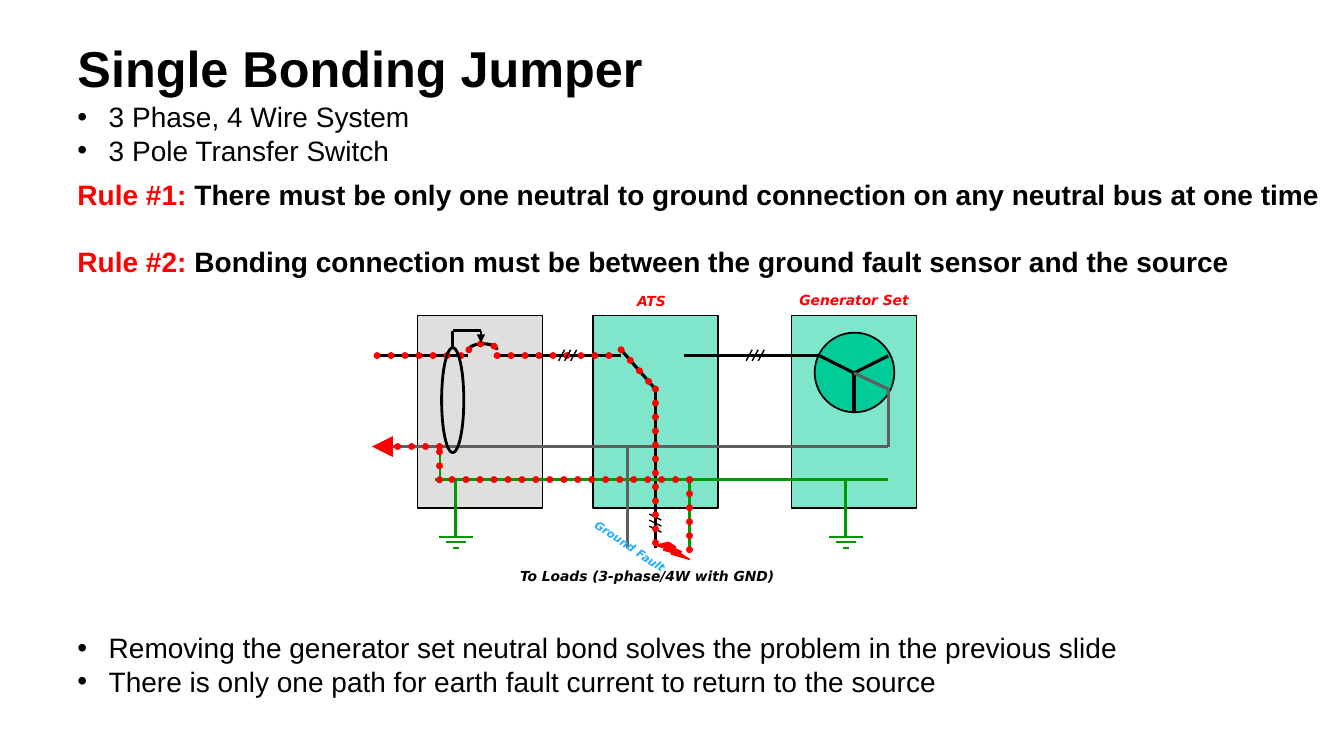
from lxml import etree
from pptx import Presentation
from pptx.dml.color import RGBColor
from pptx.enum.dml import MSO_LINE
from pptx.enum.shapes import MSO_CONNECTOR, MSO_SHAPE
from pptx.enum.text import MSO_ANCHOR, MSO_AUTO_SIZE
from pptx.oxml.ns import qn
from pptx.util import Inches, Pt

STRAIGHT = MSO_CONNECTOR.STRAIGHT
RECTANGLE = MSO_SHAPE.RECTANGLE
OVAL = MSO_SHAPE.OVAL
BRACKET = MSO_SHAPE.RIGHT_BRACKET
BOLT = MSO_SHAPE.LIGHTNING_BOLT
DOTTED = MSO_LINE.ROUND_DOT
TOP = MSO_ANCHOR.TOP
FIT = MSO_AUTO_SIZE.SHAPE_TO_FIT_TEXT

COLORS = {
    "black": "000000", "red": "FF0000", "grey": "5F5F5F", "green": "009900",
    "teal": "00CC99", "silver": "C0C0C0", "sky": "20ADFF",
}
BODY_FONT, LABEL_FONT = "Arial", "DejaVu Sans"

TITLE = "Single Bonding Jumper"
RULES = [
    ("Rule #1: ", "There must be only one neutral to ground connection on any neutral bus at one time"),
    ("Rule #2: ", "Bonding connection must be between the ground fault sensor and the source"),
]
BULLET_LISTS = [
    (0.94, 10, ["3 Phase, 4 Wire System", "3 Pole Transfer Switch"]),
    (6.21, 10.56, [
        "Removing the generator set neutral bond solves the problem in the previous slide",
        "There is only one path for earth fault current to return to the source",
    ]),
]
LABELS = [
    ("ATS", 6.22, 2.85, 0.5, "red"),
    ("Generator Set", 7.83, 2.84, 1.29, "red"),
    ("To Loads (3-phase/4W with GND)", 5.06, 5.58, 2.85, "black"),
]
CABINETS = [(4.14, "silver"), (5.88, "teal"), (7.85, "teal")]
PHASE, NEUTRAL, GROUND, LOAD_END = 3.53, 4.43, 4.76, 5.44
POLE, STAR = (6.5, 3.86), (8.47, 3.7)
WIRES = [
    ("black", 2.25, [(3.74, PHASE), (4.64, PHASE)]),
    ("black", 2.25, [(4.93, PHASE), (6.16, PHASE)]),
    ("grey", 2.25, [(3.74, NEUTRAL), (8.81, NEUTRAL)]),
    ("black", 2.25, [(6.16, 3.47), POLE, (6.5, LOAD_END)]),
    ("black", 2.25, [(6.78, PHASE), (8.13, PHASE), STAR, (8.81, PHASE)]),
    ("black", 2.25, [STAR, (8.47, 4.09)]),
    ("grey", 2.25, [STAR, (8.81, 3.86), (8.81, NEUTRAL)]),
    ("green", 1.5, [(4.36, NEUTRAL), (4.36, GROUND)]),
    ("green", 2.25, [(4.31, GROUND), (8.81, GROUND)]),
    ("grey", 2.25, [(6.22, NEUTRAL), (6.22, LOAD_END)]),
    ("green", 2.25, [(6.84, GROUND), (6.84, LOAD_END)]),
]
FAULT_PATHS = [
    [(3.74, PHASE), (4.64, PHASE)],
    [(4.93, PHASE), (6.16, PHASE)],
    [(6.16, 3.47), POLE, (6.5, 5.5)],
    [(6.84, GROUND), (6.84, 5.55)],
    [(6.84, GROUND), (4.36, GROUND), (4.36, NEUTRAL)],
]
FAULT_RETURN = [(4.36, NEUTRAL), (3.69, NEUTRAL)]
PHASE_MARKS = [5.54, 7.4]
EARTH_RODS = [4.52, 8.39]
EARTH_BARS = [(5.33, 0.17), (5.38, 0.1), (5.44, 0.03)]


def rgb(name):
    return RGBColor.from_string(COLORS[name])


def style_line(item, color, width, dotted=False, arrow=False):
    item.line.color.rgb = rgb(color)
    item.line.width = Pt(width)
    outline = item.element.spPr.find(qn("a:ln"))
    if dotted:
        item.line.dash_style = DOTTED
        outline.set("cap", "rnd")
    if arrow:
        etree.SubElement(outline, qn("a:tailEnd"), type="triangle")


def add_wire(shapes, points, color, width, **style):
    for (x1, y1), (x2, y2) in zip(points, points[1:]):
        wire = shapes.add_connector(STRAIGHT, Inches(x1), Inches(y1), Inches(x2), Inches(y2))
        style_line(wire, color, width, **style)
        etree.SubElement(wire.element.spPr, qn("a:effectLst"))


def add_part(shapes, kind, place, color, width, fill=None, alpha=None, dotted=False):
    part = shapes.add_shape(kind, *map(Inches, place))
    part.shadow.inherit = False
    if fill:
        part.fill.solid()
        part.fill.fore_color.rgb = rgb(fill)
    else:
        part.fill.background()
    if alpha:
        tint = part.element.spPr.find(qn("a:solidFill")).find(qn("a:srgbClr"))
        etree.SubElement(tint, qn("a:alpha"), val=str(alpha * 1000))
    style_line(part, color, width, dotted)
    return part


def add_breaker(shapes, color, width, dotted=False):
    breaker = add_part(shapes, BRACKET, (4.76, 3.3, 0.06, 0.28), color, width, dotted=dotted)
    breaker.adjustments[0] = 2.34
    breaker.rotation = 270


def add_text(shapes, place, paragraphs, size, font, bold=False, italic=False, wrap=True):
    box = shapes.add_textbox(*map(Inches, place))
    frame = box.text_frame
    frame.word_wrap = wrap
    frame.auto_size = FIT
    frame.vertical_anchor = TOP
    for index, spans in enumerate(paragraphs):
        para = frame.add_paragraph() if index else frame.paragraphs[0]
        for text, color in spans:
            span = para.add_run()
            span.text = text
            span.font.name = font
            span.font.size = Pt(size)
            span.font.bold = bold
            span.font.italic = italic
            span.font.color.rgb = rgb(color)
    return box


def add_texts(shapes):
    title = add_text(shapes, (0.67, 0.22, 11.75, 0.94), [[(TITLE, "black")]], 36, BODY_FONT, bold=True)
    title.text_frame.auto_size = MSO_AUTO_SIZE.NONE
    title.text_frame.margin_top = Inches(0.08)
    title.text_frame.paragraphs[0].line_spacing = Pt(48)
    rules = [[(name, "red"), (text, "black")] for name, text in RULES]
    box = add_text(shapes, (0.67, 1.71, 12.67, 1.11), rules, 20, BODY_FONT, bold=True)
    box.text_frame.paragraphs[1].space_before = Pt(24)
    for top, width, items in BULLET_LISTS:
        lines = [[(item, "black")] for item in items]
        box = add_text(shapes, (0.67, top, width, 0.77), lines, 20, BODY_FONT)
        for para in box.text_frame.paragraphs:
            layout = para._p.get_or_add_pPr()
            layout.set("marL", str(Inches(0.31)))
            layout.set("indent", str(-Inches(0.31)))
            etree.SubElement(layout, qn("a:buFont"), typeface=BODY_FONT)
            etree.SubElement(layout, qn("a:buChar"), char="•")


def add_diagram(shapes):
    for left, fill in CABINETS:
        add_part(shapes, RECTANGLE, (left, 3.13, 1.24, 1.91), "black", 1.25, fill, alpha=50)
    load_marks = shapes.add_group_shape().shapes
    for step in range(3):
        y = 5.1 + step * 0.06
        add_wire(load_marks, [(6.56, y + 0.06), (6.44, y)], "black", 1)
    add_part(shapes, OVAL, (8.08, 3.3, 0.79, 0.79), "black", 1.25, "teal")
    add_breaker(shapes, "black", 2.25)
    for color, width, points in WIRES:
        add_wire(shapes, points, color, width)

    add_breaker(shapes, "red", 5, dotted=True)
    add_part(shapes, BOLT, (6.5, 5.38, 0.34, 0.17), "red", 1, "red")
    for points in FAULT_PATHS:
        add_wire(shapes, points, "red", 5, dotted=True)
    add_wire(shapes, FAULT_RETURN, "red", 5, dotted=True, arrow=True)

    for left in PHASE_MARKS:
        marks = shapes.add_group_shape().shapes
        for step in range(3):
            x = left + step * 0.06
            add_wire(marks, [(x + 0.06, 3.47), (x, 3.58)], "black", 1)

    sensor = shapes.add_group_shape().shapes
    add_part(sensor, OVAL, (4.38, 3.45, 0.22, 1.04), "black", 2)
    add_wire(sensor, [(4.49, 3.45), (4.49, 3.28), (4.77, 3.28)], "black", 2)
    add_wire(sensor, [(4.77, 3.28), (4.77, 3.4)], "black", 1, arrow=True)

    for x in EARTH_RODS:
        earth = shapes.add_group_shape().shapes
        for y, reach in EARTH_BARS:
            add_wire(earth, [(x - reach, y), (x + reach, y)], "green", 1.5)
        add_wire(earth, [(x, 4.77), (x, 5.32)], "green", 2.25)

    for text, left, top, width, color in LABELS:
        add_text(shapes, (left, top, width, 0.27), [[(text, color)]], 9.9, LABEL_FONT, True, True, False)
    fault = add_text(shapes, (5.68, 5.51, 1.75, 0.24), [[("Ground Fault", "sky")]], 8, LABEL_FONT, True, True)
    fault.rotation = 33.8


def main():
    """Build the single bonding jumper slide."""
    deck = Presentation()
    deck.slide_width, deck.slide_height = Inches(13.33), Inches(7.5)
    page = deck.slides.add_slide(deck.slide_layouts[6])
    add_texts(page.shapes)
    add_diagram(page.shapes)
    deck.save("out.pptx")


if __name__ == "__main__":
    main()
